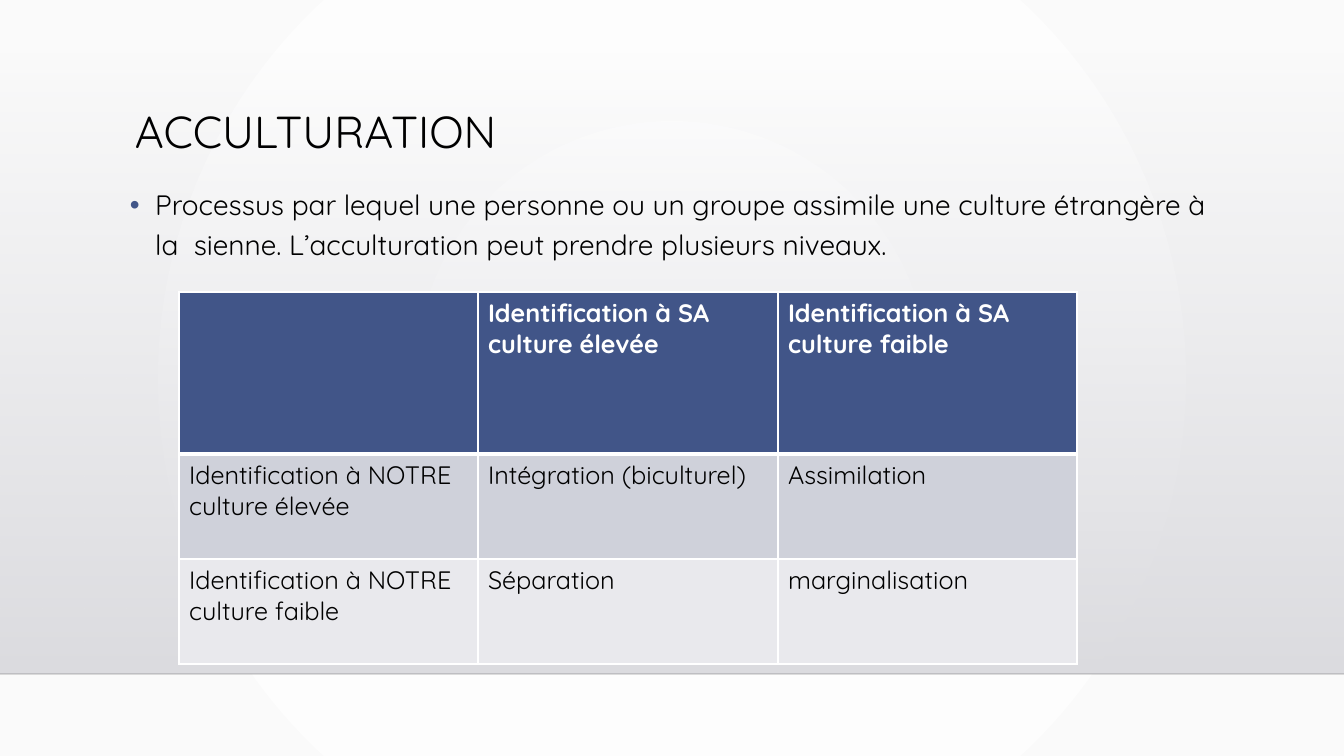
from dataclasses import dataclass

from lxml import etree
from pptx import Presentation
from pptx import util as u
from pptx.dml.color import RGBColor
from pptx.enum import shapes
from pptx.oxml import ns


@dataclass(frozen=True)
class Theme:
    font: str = "Quicksand"
    ink: str = "000000"
    white: str = "FFFFFF"
    blue: str = "415588"
    bands: tuple = ("CFD1DA", "E9E9ED")
    back: tuple = (("FFFFFF", 100), ("FAFAFA", 100))
    wall: tuple = (("DCDCE0", 0), ("DEDEE2", 100))
    edge: str = "000001"
    title: int = 32
    body: int = 20
    cell: int = 18


def px(size):
    return u.Emu(round(size * 914400 / 100.8))


def rgb(code):
    return RGBColor.from_string(code)


def add(parent, tag, **attrs):
    node = etree.SubElement(parent, ns.qn(tag))
    for name, value in attrs.items():
        node.set(name, str(value))
    return node


def tint(parent, code, alpha=100):
    color = add(parent, "a:srgbClr", val=code)
    if alpha < 100:
        add(color, "a:alpha", val=alpha * 1000)


def blend(host, stops, radial=False):
    grad = host.find(ns.qn("a:gradFill"))
    for child in list(grad):
        grad.remove(child)
    line = add(grad, "a:gsLst")
    for spot, (code, alpha) in zip((0, 100000), stops):
        tint(add(line, "a:gs", pos=spot), code, alpha)
    if radial:
        way = add(grad, "a:path", path="circle")
        add(way, "a:fillToRect", l=50000, t=50000, r=50000, b=50000)
    else:
        add(grad, "a:lin", ang=5400000, scaled=0)


def write(frame, words, *, size, color, font, bold=False, lead=1.0, bullet=None):
    frame.word_wrap = True
    para = frame.paragraphs[0]
    para.line_spacing = lead
    if bullet:
        props = para._p.get_or_add_pPr()
        props.set("marL", str(u.Inches(0.25)))
        props.set("indent", str(-u.Inches(0.25)))
        tint(add(props, "a:buClr"), bullet)
        add(props, "a:buFont", typeface="Arial")
        add(props, "a:buChar", char="•")
    run = para.add_run()
    run.text = words
    run.font.name = font
    run.font.size = u.Pt(size)
    run.font.bold = bold
    run.font.color.rgb = rgb(color)


class Deck:
    def __init__(self, theme, wide, high):
        self.theme = theme
        self.file = Presentation()
        self.file.slide_width = px(wide)
        self.file.slide_height = px(high)
        self.slide = self.file.slides.add_slide(self.file.slide_layouts[6])

    def back(self):
        self.slide.background.fill.gradient()
        host = self.slide.element.find(".//" + ns.qn("p:bgPr"))
        blend(host, self.theme.back, radial=True)

    def wall(self, *box):
        shape = self.slide.shapes.add_shape(shapes.MSO_SHAPE.RECTANGLE, *map(px, box))
        shape.shadow.inherit = False
        shape.line.fill.background()
        shape.fill.gradient()
        blend(shape._element.spPr, self.theme.wall)

    def rule(self, *ends):
        line = self.slide.shapes.add_connector(shapes.MSO_CONNECTOR.STRAIGHT, *map(px, ends))
        line.line.width = u.Pt(1)
        line.line.color.rgb = rgb(self.theme.edge)
        props = line._element.spPr
        add(props.find(".//" + ns.qn("a:srgbClr")), "a:alpha", val=20000)
        add(props, "a:effectLst")

    def text(self, box, words, size, **style):
        frame = self.slide.shapes.add_textbox(*map(px, box)).text_frame
        write(frame, words, size=size, color=self.theme.ink, font=self.theme.font, **style)

    def border(self, cell, **widths):
        props = cell._tc.get_or_add_tcPr()
        for side in "LRTB":
            line = add(props, "a:ln" + side, w=u.Pt(widths.get(side, 1)))
            tint(add(line, "a:solidFill"), self.theme.white)

    def table(self, left, top, cols, rows, data):
        look = self.theme
        box = map(px, (left, top, sum(cols), sum(rows)))
        grid = self.slide.shapes.add_table(len(rows), len(cols), *box).table
        grid.first_row = grid.horz_banding = False
        for col, wide in zip(grid.columns, cols):
            col.width = px(wide)
        for row, high in zip(grid.rows, rows):
            row.height = px(high)
        fills = (look.blue, *look.bands)
        edges = ({"B": 3}, {"T": 3}, {})
        for r, line in enumerate(data):
            head = r == 0
            for c, words in enumerate(line):
                cell = grid.cell(r, c)
                self.border(cell, **edges[r])
                cell.fill.solid()
                cell.fill.fore_color.rgb = rgb(fills[r])
                if words:
                    write(cell.text_frame, words, size=look.cell, font=look.font,
                          color=look.white if head else look.ink, bold=head)

    def save(self):
        self.file.save("out.pptx")


def main():
    look = Theme()
    deck = Deck(look, 1344, 756)
    deck.back()
    deck.wall(0, 51, 1344, 623)
    deck.rule(0, 674, 1344, 674)
    deck.text((125, 105, 1058, 116), "ACCULTURATION", look.title, lead=0.9)
    deck.text(
        (120, 176, 1117, 491),
        "Processus par lequel une personne ou un groupe assimile une culture étrangère à "
        "la  sienne. L’acculturation peut prendre plusieurs niveaux.",
        look.body, lead=1.2, bullet=look.blue,
    )
    deck.table(179, 292, [299, 300, 299], [162, 105, 105], [
        ("", "Identification à SA culture élevée", "Identification à SA culture faible"),
        ("Identification à NOTRE culture élevée", "Intégration (biculturel)", "Assimilation"),
        ("Identification à NOTRE culture faible", "Séparation", "marginalisation"),
    ])
    deck.save()


if __name__ == "__main__":
    main()
